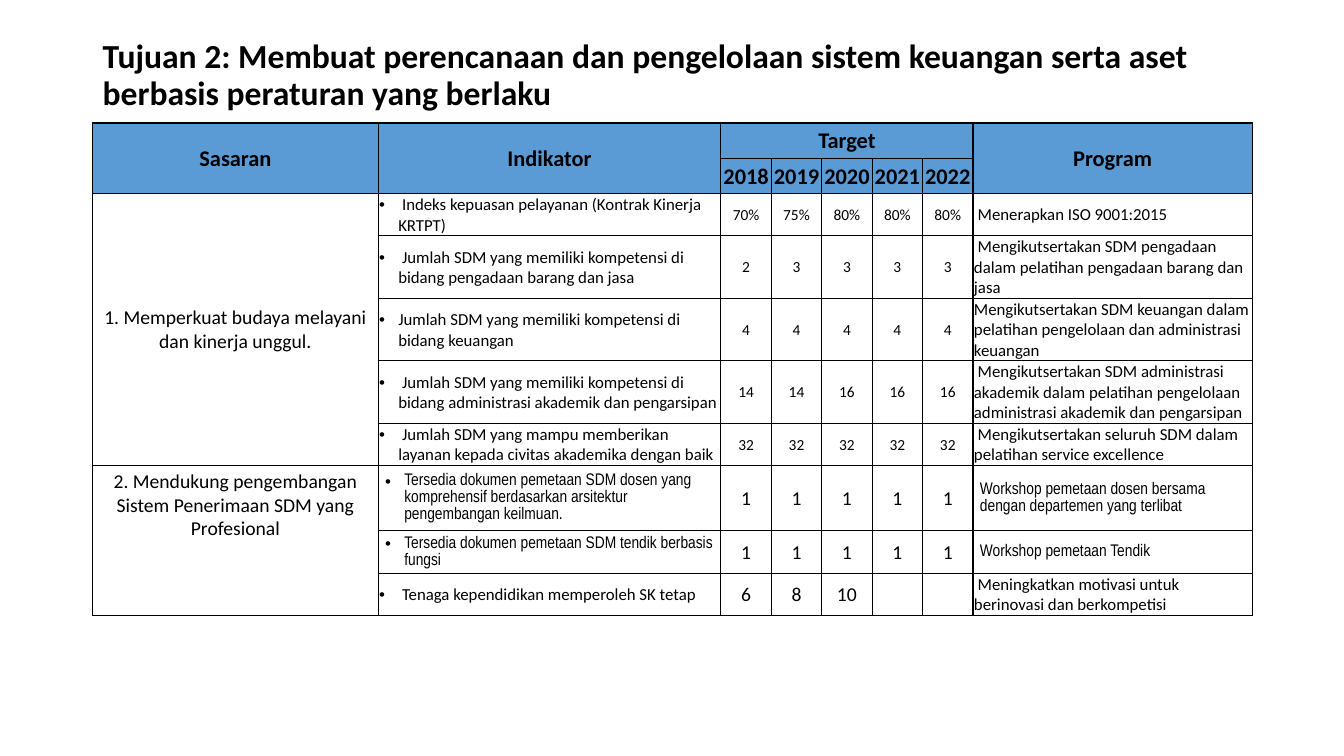
from dataclasses import dataclass

import lxml.etree
import pptx
import pptx.dml.color
import pptx.enum.text
import pptx.oxml.ns
import pptx.util

Inches = pptx.util.Inches
Align = pptx.enum.text.PP_ALIGN
Anchor = pptx.enum.text.MSO_ANCHOR

BLACK = "000000"
HEADER_BLUE = "5B9BD5"
NARROW = "Arial Narrow"
YEARS = ["2018", "2019", "2020", "2021", "2022"]
COL_WIDTHS = [2.83, 3.4] + [0.5] * len(YEARS) + [2.77]
HEADER_HEIGHT = 0.35
FIRST_YEAR = 2
PROGRAM = FIRST_YEAR + len(YEARS)


@dataclass
class Indicator:
    name: str
    targets: list[str]
    program: str
    height: float
    target_size: int = 11
    narrow: bool = False


@dataclass
class Goal:
    name: str
    indicators: list[Indicator]
    anchor: Anchor = Anchor.MIDDLE
    top: float = 0.01


GOALS = [
    Goal("1. Memperkuat budaya melayani dan kinerja unggul.", [
        Indicator(" Indeks kepuasan pelayanan (Kontrak Kinerja KRTPT)",
                  ["70%", "75%", "80%", "80%", "80%"],
                  " Menerapkan ISO 9001:2015", 0.42),
        Indicator(" Jumlah SDM yang memiliki kompetensi di bidang pengadaan barang dan jasa",
                  ["2", "3", "3", "3", "3"],
                  " Mengikutsertakan SDM pengadaan dalam pelatihan pengadaan barang dan jasa", 0.62),
        Indicator("Jumlah SDM yang memiliki kompetensi di bidang keuangan",
                  ["4"] * 5,
                  "Mengikutsertakan SDM keuangan dalam pelatihan pengelolaan dan administrasi keuangan",
                  0.62),
        Indicator(" Jumlah SDM yang memiliki kompetensi di bidang administrasi akademik dan pengarsipan",
                  ["14", "14", "16", "16", "16"],
                  " Mengikutsertakan SDM administrasi akademik dalam pelatihan pengelolaan "
                  "administrasi akademik dan pengarsipan", 0.62),
        Indicator(" Jumlah SDM yang mampu memberikan layanan kepada civitas akademika dengan baik",
                  ["32"] * 5,
                  " Mengikutsertakan seluruh SDM dalam pelatihan service excellence", 0.42),
    ]),
    Goal("2. Mendukung pengembangan Sistem Penerimaan SDM yang Profesional", [
        Indicator("Tersedia dokumen pemetaan SDM dosen yang komprehensif berdasarkan arsitektur "
                  "pengembangan keilmuan.",
                  ["1"] * 5,
                  "Workshop pemetaan dosen bersama dengan departemen yang terlibat",
                  0.5, 14, True),
        Indicator("Tersedia dokumen pemetaan SDM tendik berbasis fungsi",
                  ["1"] * 5, "Workshop pemetaan Tendik", 0.36, 14, True),
        Indicator(" Tenaga kependidikan memperoleh SK tetap",
                  ["6", "8", "10", "", ""],
                  " Meningkatkan motivasi untuk berinovasi dan berkompetisi", 0.42, 14),
    ], Anchor.TOP, 0.04),
]


def rgb(value: str) -> pptx.dml.color.RGBColor:
    return pptx.dml.color.RGBColor.from_string(value)


def add_xml(parent, tag: str, **attrs: str):
    return lxml.etree.SubElement(parent, pptx.oxml.ns.qn(tag), attrs)


def write(tf, text: str, *, size: int, font: str = "Calibri", bold: bool = False,
          align: Align = Align.LEFT, spacing: float = 1.0, bullet: bool = False) -> None:
    p = tf.paragraphs[0]
    p.alignment = align
    p.line_spacing = spacing
    if bullet:
        pPr = p._p.get_or_add_pPr()
        pPr.set("marL", str(Inches(0.19)))
        pPr.set("indent", str(Inches(-0.19)))
        add_xml(pPr, "a:buFont", typeface="Arial")
        add_xml(pPr, "a:buChar", char="•")
    r = p.add_run()
    r.text = text
    r.font.name = font
    r.font.size = pptx.util.Pt(size)
    r.font.bold = bold
    r.font.color.rgb = rgb(BLACK)


def style_cell(cell, fill: str | None = None) -> None:
    """Set margins, anchor, fill and thin black borders."""
    cell.margin_left = cell.margin_right = cell.margin_top = Inches(0.01)
    cell.margin_bottom = 0
    cell.vertical_anchor = Anchor.MIDDLE
    if fill:
        cell.fill.solid()
        cell.fill.fore_color.rgb = rgb(fill)
    else:
        cell.fill.background()
    tcPr = cell._tc.get_or_add_tcPr()
    for i, side in enumerate("LRTB"):
        ln = add_xml(tcPr, f"a:ln{side}", w=str(pptx.util.Pt(1)))
        add_xml(add_xml(ln, "a:solidFill"), "a:srgbClr", val=BLACK)
        tcPr.insert(i, ln)


def fill_header(table) -> None:
    headings = [(0, 0, 1, 0, "Sasaran"), (0, 1, 1, 1, "Indikator"),
                (0, FIRST_YEAR, 0, PROGRAM - 1, "Target"),
                (0, PROGRAM, 1, PROGRAM, "Program")]
    headings += [(1, c, 1, c, year) for c, year in enumerate(YEARS, FIRST_YEAR)]
    for top, left, bottom, right, text in headings:
        cell = table.cell(top, left)
        if (top, left) != (bottom, right):
            cell.merge(table.cell(bottom, right))
        write(cell.text_frame, text, size=16, bold=True, align=Align.CENTER)


def fill_indicator(table, row: int, item: Indicator) -> None:
    for col, text, bullet in ((1, item.name, True), (PROGRAM, item.program, False)):
        cell = table.cell(row, col)
        if item.narrow:
            cell.margin_left = cell.margin_right = Inches(0.07)
            cell.margin_top = 0
            write(cell.text_frame, text, size=12, font=NARROW, spacing=1.07, bullet=bullet)
        else:
            write(cell.text_frame, text, size=12, bullet=bullet)
    for col, target in enumerate(item.targets, FIRST_YEAR):
        write(table.cell(row, col).text_frame, target, size=item.target_size, align=Align.CENTER)


def add_plan_table(slide) -> None:
    heights = [HEADER_HEIGHT] * 2 + [item.height for goal in GOALS for item in goal.indicators]
    frame = slide.shapes.add_table(len(heights), len(COL_WIDTHS), Inches(0.92), Inches(1.22),
                                   Inches(sum(COL_WIDTHS)), Inches(sum(heights)))
    table = frame.table
    table.first_row = table.horz_banding = False
    for column, width in zip(table.columns, COL_WIDTHS):
        column.width = Inches(width)
    for i, height in enumerate(heights):
        table.rows[i].height = Inches(height)
        for cell in table.rows[i].cells:
            style_cell(cell, HEADER_BLUE if i < 2 else None)
    fill_header(table)
    row = 2
    for goal in GOALS:
        cell = table.cell(row, 0)
        cell.merge(table.cell(row + len(goal.indicators) - 1, 0))
        cell.vertical_anchor = goal.anchor
        cell.margin_top = Inches(goal.top)
        write(cell.text_frame, goal.name, size=14, align=Align.CENTER)
        for item in goal.indicators:
            fill_indicator(table, row, item)
            row += 1


def add_title(slide) -> None:
    sp = slide.shapes.add_textbox(Inches(0.92), Inches(0.4), Inches(11.5), Inches(0.71))
    tf = sp.text_frame
    tf.word_wrap = True
    tf.vertical_anchor = Anchor.MIDDLE
    write(tf, "Tujuan 2: Membuat perencanaan dan pengelolaan sistem keuangan serta aset "
          "berbasis peraturan yang berlaku", size=24, bold=True, spacing=0.9)


def main() -> None:
    prs = pptx.Presentation()
    prs.slide_width, prs.slide_height = Inches(13.33), Inches(7.5)
    slide = prs.slides.add_slide(prs.slide_layouts[6])
    add_title(slide)
    add_plan_table(slide)
    prs.save("out.pptx")


if __name__ == "__main__":
    main()
